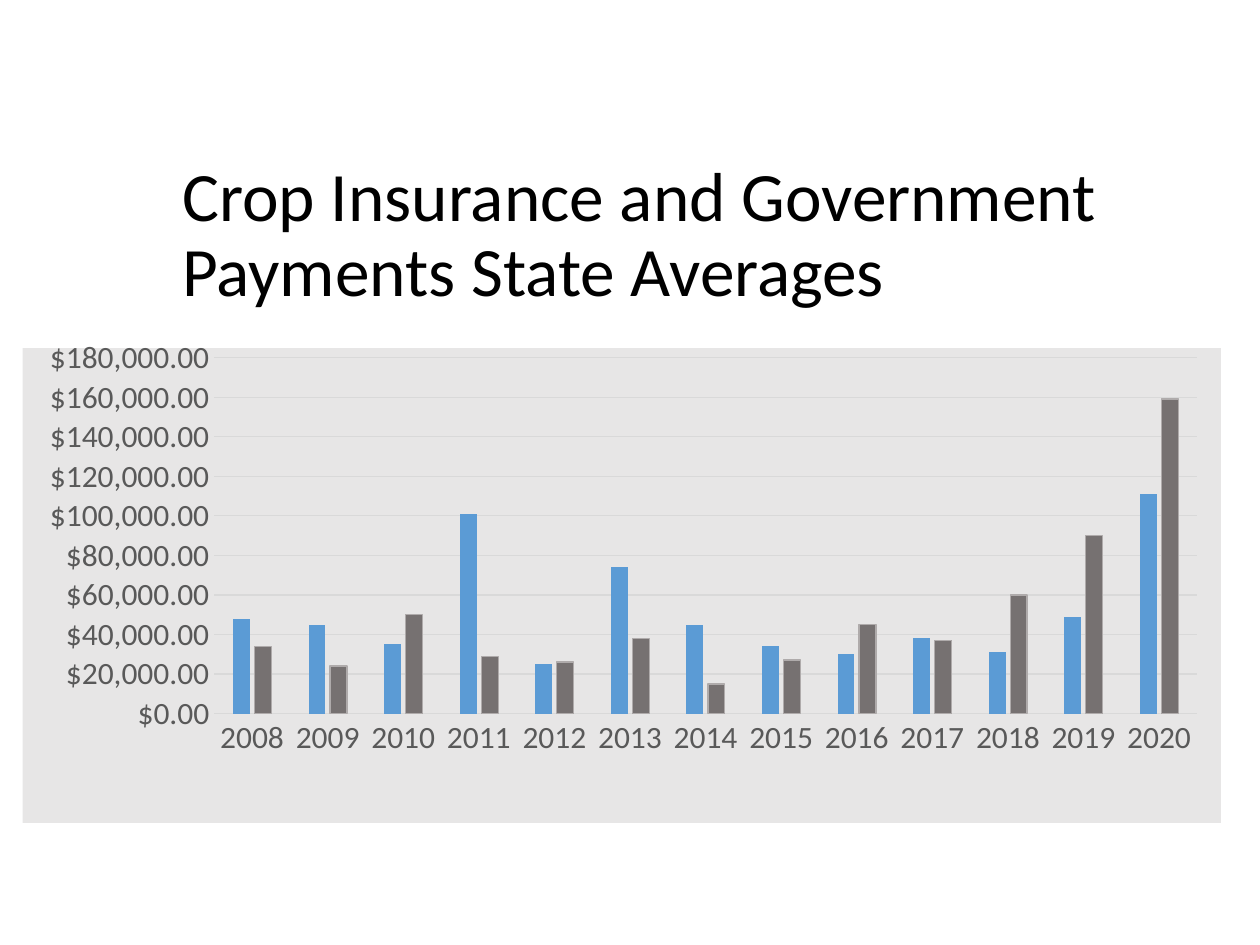
from lxml.etree import SubElement
from pptx import Presentation
from pptx.chart.data import CategoryChartData
from pptx.dml.color import RGBColor
from pptx.enum.chart import XL_CHART_TYPE as ChartType, XL_TICK_MARK as TickMark
from pptx.enum.text import MSO_ANCHOR as Anchor
from pptx.oxml import parse_xml
from pptx.oxml.ns import nsdecls, qn
from pptx.util import Inches, Pt

FONT = "Calibri"
COLORS = {
    "title": "000000",
    "label": "595959",
    "grid": "D9D9D9",
    "panel": "E7E6E6",
    "insurance": "5B9BD5",
    "government": "767171",
    "outline": "AFABAB",
}
YEARS = [str(year) for year in range(2008, 2021)]
INSURANCE = [48000, 45000, 35000, 101000, 25000, 74000, 45000,
             34000, 30000, 38000, 31000, 49000, 111000]
GOVERNMENT = [34000, 24000, 50000, 29000, 26000, 38000, 15000,
              27000, 45000, 37000, 60000, 90000, 159000]
PLOT_LAYOUT = {"x": 0.16, "y": 0.02, "w": 0.82, "h": 0.75}


def color(name):
    """Return the named palette colour."""
    return RGBColor.from_string(COLORS[name])


def style_font(font, size, name):
    """Set typeface, size and colour of a font."""
    font.name = FONT
    font.size = Pt(size)
    font.color.rgb = color(name)


def style_line(line, name):
    """Give a line its colour and the common width."""
    line.color.rgb = color(name)
    line.width = Pt(0.75)


def add_title(page, text):
    """Add the slide title."""
    box = page.shapes.add_textbox(Inches(1.35), Inches(1.35), Inches(8.2), Inches(1.05))
    frame = box.text_frame
    frame.word_wrap = True
    frame.vertical_anchor = Anchor.MIDDLE
    para = frame.paragraphs[0]
    para.text = text
    para.line_spacing = 0.9
    style_font(para.font, 39.6, "title")


def fill_chart_area(chart, name):
    """Fill the chart background without a border."""
    panel = parse_xml(
        f'<c:spPr {nsdecls("c", "a")}><a:solidFill><a:srgbClr val="{COLORS[name]}"/>'
        "</a:solidFill><a:ln><a:noFill/></a:ln></c:spPr>"
    )
    chart.element.find(qn("c:chart")).addnext(panel)


def place_plot(chart, fractions):
    """Fix the inner plot area as fractions of the chart."""
    plot_area = chart.element.find(qn("c:chart")).find(qn("c:plotArea"))
    for old in plot_area.findall(qn("c:layout")):
        plot_area.remove(old)
    layout = parse_xml(f'<c:layout {nsdecls("c")}/>')
    manual = SubElement(layout, qn("c:manualLayout"))
    settings = {"layoutTarget": "inner", "xMode": "edge", "yMode": "edge", **fractions}
    for tag, value in settings.items():
        SubElement(manual, qn(f"c:{tag}")).set("val", str(value))
    plot_area.insert(0, layout)


def style_axes(chart):
    """Format the year axis and the dollar axis."""
    years, dollars = chart.category_axis, chart.value_axis
    for axis in (years, dollars):
        axis.major_tick_mark = axis.minor_tick_mark = TickMark.NONE
        style_font(axis.tick_labels.font, 18, "label")
    style_line(years.format.line, "grid")
    dollars.format.line.fill.background()
    dollars.minimum_scale = 0
    dollars.maximum_scale = 180000
    dollars.major_unit = 20000
    dollars.has_major_gridlines = True
    style_line(dollars.major_gridlines.format.line, "grid")
    dollars.tick_labels.number_format = '"$"#,##0.00'
    dollars.tick_labels.number_format_is_linked = False


def add_payments_chart(page):
    """Add the clustered columns of insurance and government payments."""
    data = CategoryChartData()
    data.categories = YEARS
    data.add_series("Insurance", INSURANCE)
    data.add_series("Government Payments", GOVERNMENT)
    chart = page.shapes.add_chart(
        ChartType.COLUMN_CLUSTERED,
        Inches(0.18), Inches(2.69), Inches(9.51), Inches(3.84), data,
    ).chart
    chart.has_legend = False
    chart.has_title = False
    style_font(chart.font, 18, "title")
    fill_chart_area(chart, "panel")
    place_plot(chart, PLOT_LAYOUT)
    style_axes(chart)
    plot = chart.plots[0]
    plot.gap_width = 219
    plot.overlap = -27
    plot.vary_by_categories = False
    insurance, government = plot.series
    for series, name in ((insurance, "insurance"), (government, "government")):
        series.format.fill.solid()
        series.format.fill.fore_color.rgb = color(name)
    style_line(government.format.line, "outline")


def main():
    """Build and save the slide."""
    deck = Presentation()
    deck.slide_width, deck.slide_height = Inches(10), Inches(7.5)
    page = deck.slides.add_slide(deck.slide_layouts[6])
    add_title(page, "Crop Insurance and Government Payments State Averages")
    add_payments_chart(page)
    deck.save("out.pptx")


if __name__ == "__main__":
    main()
